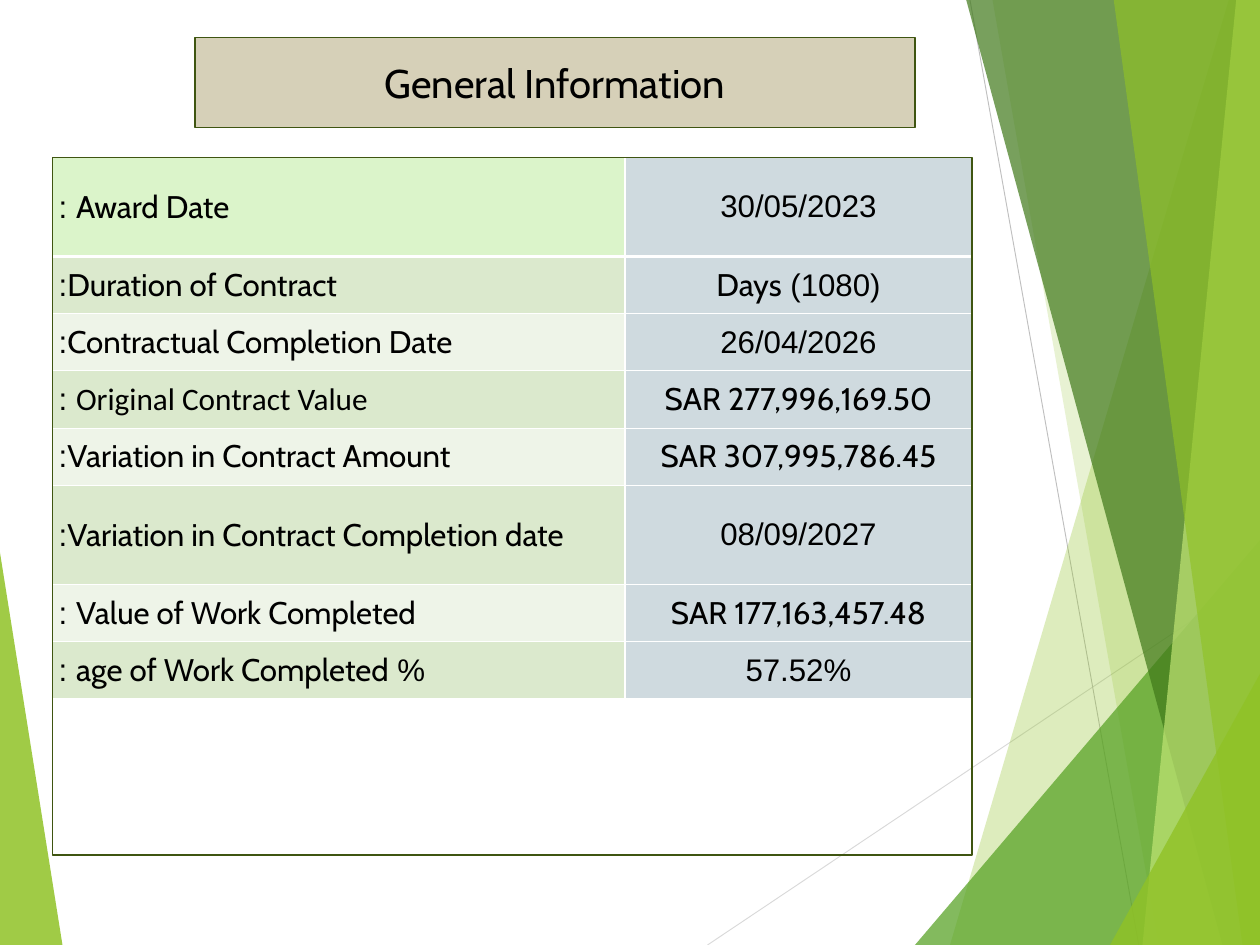
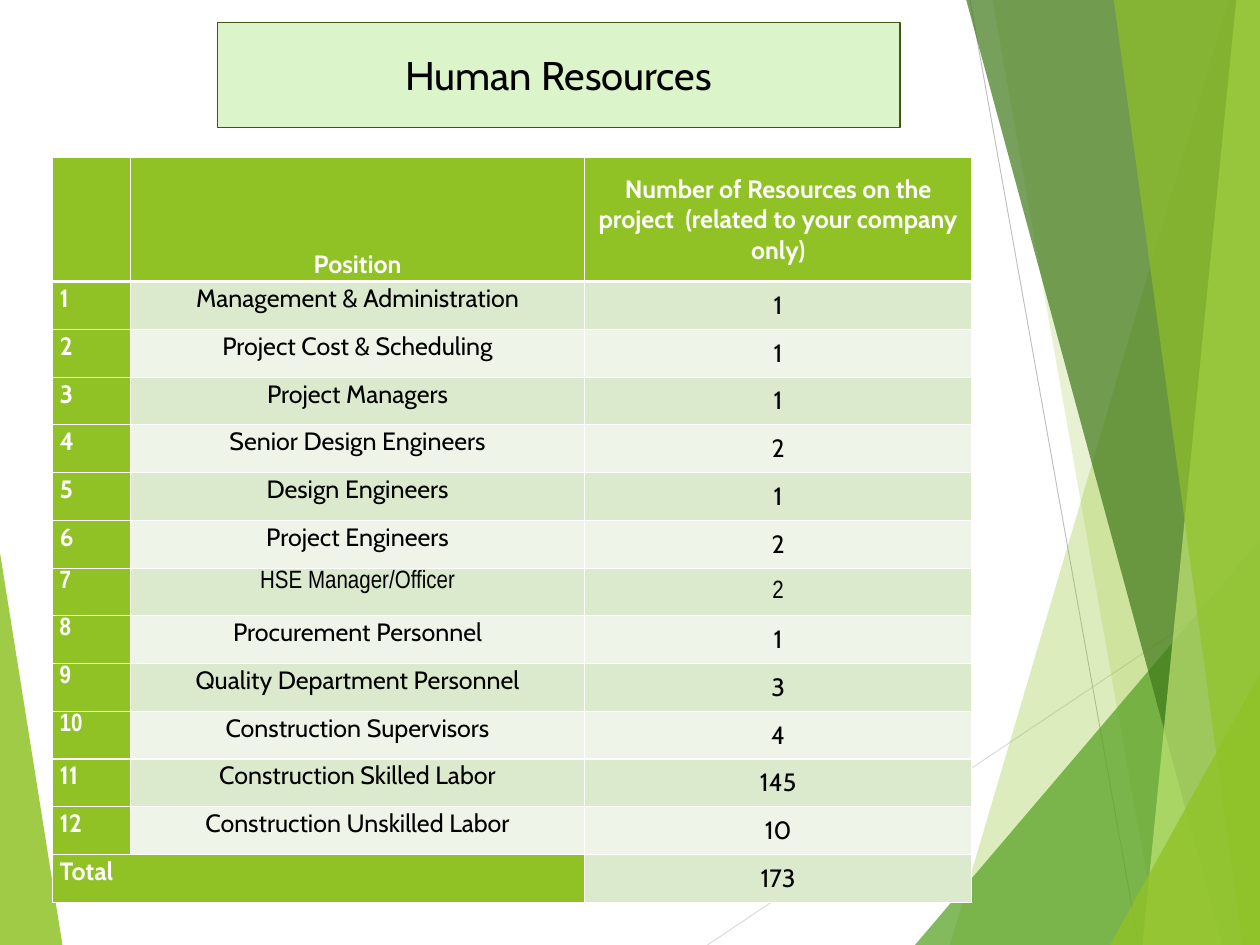
from dataclasses import dataclass

from lxml import etree
from pptx import Presentation
from pptx.dml.color import RGBColor
from pptx.enum.shapes import MSO_CONNECTOR, MSO_SHAPE
from pptx.enum.text import MSO_ANCHOR, PP_ALIGN
from pptx.oxml.ns import qn
from pptx.util import Pt

STRAIGHT = MSO_CONNECTOR.STRAIGHT
RECTANGLE = MSO_SHAPE.RECTANGLE
TOP, MIDDLE, BOTTOM = MSO_ANCHOR.TOP, MSO_ANCHOR.MIDDLE, MSO_ANCHOR.BOTTOM
LEFT, CENTER = PP_ALIGN.LEFT, PP_ALIGN.CENTER
PAGE_WIDTH, PAGE_HEIGHT = 1008, 756
TABLE_LEFT, TABLE_TOP, TABLE_WIDTH = 42, 126, 735.5
FRAME_HEIGHT = 558


@dataclass(frozen=True)
class Theme:
    lime: str = "90C226"
    green: str = "54A021"
    forest: str = "3F7819"
    pale_lime: str = "C0E474"
    outline: str = "3F5511"
    sand: str = "D6D0B8"
    mint: str = "DBF4CA"
    mist: str = "CFDADF"
    odd_row: str = "DBE9CD"
    even_row: str = "EEF4E8"
    white: str = "FFFFFF"
    black: str = "000000"
    light_gray: str = "D9D9D9"
    gray: str = "BFBFBF"
    font: str = "Cabin"
    plain_font: str = "Calibri"
    narrow_font: str = "Arial Narrow"
    complex_font: str = "Arial"
    title_size: float = 32
    info_size: float = 25
    staff_size: float = 20


THEME = Theme()


@dataclass(frozen=True)
class Facet:
    color: str
    opacity: int
    points: tuple[tuple[float, float], ...]


@dataclass(frozen=True)
class Ray:
    color: str
    start: tuple[float, float]
    end: tuple[float, float]


@dataclass(frozen=True)
class TitleBox:
    text: str
    left: float
    top: float
    width: float
    height: float
    fill: str
    geometry: str


@dataclass(frozen=True)
class CellStyle:
    fill: str
    size: float
    color: str = THEME.black
    font: str = THEME.font
    bold: bool = False
    align: PP_ALIGN = CENTER
    anchor: MSO_ANCHOR = MIDDLE
    margins: tuple[float, float] = (5.75, 1.45)
    right_to_left: bool = False


def band(color: str, opacity: int, top_x: float, bottom_x: float) -> Facet:
    """Full-height facet that reaches the right edge of the page."""
    return Facet(color, opacity, ((top_x, 0), (bottom_x, PAGE_HEIGHT),
                                  (PAGE_WIDTH, PAGE_HEIGHT), (PAGE_WIDTH, 0)))


def corner(color: str, opacity: int, bottom_x: float, right_y: float) -> Facet:
    """Triangle in the bottom right corner of the page."""
    return Facet(color, opacity, ((bottom_x, PAGE_HEIGHT), (PAGE_WIDTH, right_y),
                                  (PAGE_WIDTH, PAGE_HEIGHT)))


BACKDROP = (
    Facet(THEME.lime, 85, ((0, 442), (49.7, PAGE_HEIGHT), (0, PAGE_HEIGHT))),
    Ray(THEME.light_gray, (566, PAGE_HEIGHT), (PAGE_WIDTH, 460)),
    Ray(THEME.gray, (776, 0), (911, PAGE_HEIGHT)),
    band(THEME.lime, 30, 982.8, 759.6),
    band(THEME.lime, 20, 794.2, 926.6),
    corner(THEME.green, 72, 731.5, 432),
    band(THEME.forest, 70, 772.6, 977.8),
    band(THEME.pale_lime, 70, 989.3, 914.4),
    band(THEME.lime, 65, 890.6, 993.6),
    corner(THEME.lime, 80, 888.5, 539.3),
)

INFO_TITLE = TitleBox("General Information", 156, 30, 576, 72, THEME.sand, "rect")
INFO_COLUMNS = (458, 277.5)
INFO_TALL, INFO_SHORT = 79.2, 45.8
INFO_ROWS = (
    ("Award Date :", "30/05/2023", INFO_TALL),
    ("Duration of Contract:", "(1080) Days", INFO_SHORT),
    ("Contractual Completion Date:", "26/04/2026", INFO_SHORT),
    ("Original Contract Value :", "SAR 277,996,169.50", INFO_SHORT),
    ("Variation in Contract Amount:", "SAR 307,995,786.45", INFO_SHORT),
    ("Variation in Contract Completion date:", "08/09/2027", INFO_TALL),
    ("Value of Work Completed :", "SAR 177,163,457.48", INFO_SHORT),
    ("% age of Work Completed :", "57.52%", INFO_SHORT),
)
PLAIN_INFO_ROW = 3

STAFF_TITLE = TitleBox("Human Resources", 174, 18, 546, 84, THEME.mint, "roundRect")
STAFF_COLUMNS = (62.6, 363, 309.9)
STAFF_HEADER_HEIGHT, STAFF_ROW_HEIGHT = 99.4, 38.2
STAFF_HEADERS = ("Position",
                 "Number of Resources on the project  (related to your company only)")
STAFF = (
    ("Management & Administration", 1),
    ("Project Cost & Scheduling", 1),
    ("Project Managers", 1),
    ("Senior Design Engineers", 2),
    ("Design Engineers", 1),
    ("Project Engineers", 2),
    ("HSE Manager/Officer", 2),
    ("Procurement Personnel", 1),
    ("Quality Department Personnel", 3),
    ("Construction Supervisors", 4),
    ("Construction Skilled Labor", 145),
    ("Construction Unskilled Labor", 10),
)
NARROW_STAFF_ROW = 7
NARROW_NUMBERS = range(7, 11)


def rgb(color: str) -> RGBColor:
    return RGBColor.from_string(color)


def paint(shape, color: str) -> None:
    shape.fill.solid()
    shape.fill.fore_color.rgb = rgb(color)


def draw_facet(shapes, facet: Facet) -> None:
    builder = shapes.build_freeform(*facet.points[0], scale=Pt(1))
    builder.add_line_segments(facet.points[1:], close=True)
    shape = builder.convert_to_shape()
    paint(shape, facet.color)
    shape.line.fill.background()
    shape.shadow.inherit = False
    color = shape.element.spPr.find(f"{qn('a:solidFill')}/{qn('a:srgbClr')}")
    etree.SubElement(color, qn("a:alpha"), val=str(facet.opacity * 1000))


def draw_ray(shapes, ray: Ray) -> None:
    line = shapes.add_connector(STRAIGHT, *(Pt(n) for n in ray.start + ray.end))
    line.line.color.rgb = rgb(ray.color)
    line.line.width = Pt(0.75)
    etree.SubElement(line.element.spPr, qn("a:effectLst"))


def add_backdrop(page, layout) -> None:
    """Draw the facets on a page, then move them to the layout behind its title."""
    for holder in list(layout.placeholders)[1:]:
        layout.shapes.element.remove(holder.element)
    group = page.shapes.add_group_shape()
    for part in BACKDROP:
        if isinstance(part, Facet):
            draw_facet(group.shapes, part)
        else:
            draw_ray(group.shapes, part)
    layout.shapes.element.insert(2, group.element)


def outline(shape) -> None:
    shape.line.color.rgb = rgb(THEME.outline)
    shape.line.width = Pt(1.5)


def set_title(page, spec_box: TitleBox) -> None:
    title = page.shapes.title
    title.left, title.top = Pt(spec_box.left), Pt(spec_box.top)
    title.width, title.height = Pt(spec_box.width), Pt(spec_box.height)
    geometry = etree.Element(qn("a:prstGeom"), prst=spec_box.geometry)
    etree.SubElement(geometry, qn("a:avLst"))
    title.element.spPr.insert(1, geometry)
    paint(title, spec_box.fill)
    outline(title)
    title.text_frame.text = spec_box.text
    title.text_frame.word_wrap = True
    title.text_frame.vertical_anchor = MIDDLE
    para = title.text_frame.paragraphs[0]
    para.alignment = CENTER
    para.font.name, para.font.size = THEME.font, Pt(THEME.title_size)
    para.font.color.rgb = rgb(THEME.black)


def add_grid(page, columns: tuple[float, ...], heights: list[float]):
    """Add an empty table with the given column widths and row heights."""
    table = page.shapes.add_table(
        len(heights), len(columns), Pt(TABLE_LEFT), Pt(TABLE_TOP),
        Pt(TABLE_WIDTH), Pt(sum(heights))).table
    table.horz_banding = False
    for column, width in zip(table.columns, columns):
        column.width = Pt(width)
    for row, height in zip(table.rows, heights):
        row.height = Pt(height)
    return table


def set_borders(cell, row: int) -> None:
    """White borders, thick between the first row and the second."""
    properties = cell._tc.get_or_add_tcPr()
    widths = {"L": 1, "R": 1, "T": 3 if row == 1 else 1, "B": 3 if row == 0 else 1}
    for index, (side, width) in enumerate(widths.items()):
        border = etree.Element(qn(f"a:ln{side}"), w=str(Pt(width)))
        fill = etree.SubElement(border, qn("a:solidFill"))
        etree.SubElement(fill, qn("a:srgbClr"), val=THEME.white)
        properties.insert(index, border)


def fill_cell(table, row: int, column: int, text: str, style: CellStyle) -> None:
    cell = table.cell(row, column)
    paint(cell, style.fill)
    set_borders(cell, row)
    cell.vertical_anchor = style.anchor
    cell.margin_left = cell.margin_right = Pt(style.margins[0])
    cell.margin_top = cell.margin_bottom = Pt(style.margins[1])
    cell.text = text
    para = cell.text_frame.paragraphs[0]
    para.alignment = style.align
    para.font.name, para.font.size = style.font, Pt(style.size)
    para.font.bold = style.bold
    para.font.color.rgb = rgb(style.color)
    if style.right_to_left:
        properties = para._p.get_or_add_pPr()
        properties.set("rtl", "1")
        etree.SubElement(properties.find(qn("a:defRPr")), qn("a:cs"),
                         typeface=THEME.complex_font)


def row_fill(row: int) -> str:
    return THEME.odd_row if row % 2 else THEME.even_row


def info_style(fill: str, **changes) -> CellStyle:
    return CellStyle(fill, THEME.info_size, margins=(5, 0.35), right_to_left=True, **changes)


def build_general_information(page) -> None:
    table = add_grid(page, INFO_COLUMNS, [height for _, _, height in INFO_ROWS])
    for row, (label, value, _) in enumerate(INFO_ROWS):
        fill = row_fill(row) if row else THEME.mint
        font = THEME.plain_font if row == PLAIN_INFO_ROW else THEME.font
        fill_cell(table, row, 0, label, info_style(fill, align=LEFT, font=font))
        fill_cell(table, row, 1, value, info_style(THEME.mist))
    set_title(page, INFO_TITLE)
    frame = page.shapes.add_shape(RECTANGLE, Pt(TABLE_LEFT), Pt(TABLE_TOP),
                                  Pt(TABLE_WIDTH), Pt(FRAME_HEIGHT))
    frame.fill.background()
    outline(frame)
    frame.shadow.inherit = False


def staff_style(fill: str, **changes) -> CellStyle:
    return CellStyle(fill, THEME.staff_size, **changes)


def lime_style(**changes) -> CellStyle:
    return staff_style(THEME.lime, color=THEME.white, bold=True, **changes)


def build_human_resources(page) -> None:
    set_title(page, STAFF_TITLE)
    total_row = len(STAFF) + 1
    table = add_grid(page, STAFF_COLUMNS,
                     [STAFF_HEADER_HEIGHT] + [STAFF_ROW_HEIGHT] * total_row)
    for column, text in enumerate(("",) + STAFF_HEADERS):
        anchor = BOTTOM if column == 1 else MIDDLE
        fill_cell(table, 0, column, text, lime_style(anchor=anchor))
    for row, (position, count) in enumerate(STAFF, start=1):
        fill = row_fill(row)
        number_font = THEME.narrow_font if row in NARROW_NUMBERS else THEME.font
        font = THEME.narrow_font if row == NARROW_STAFF_ROW else THEME.font
        fill_cell(table, row, 0, str(row),
                  lime_style(font=number_font, align=LEFT, anchor=TOP))
        fill_cell(table, row, 1, position, staff_style(fill, font=font, anchor=TOP))
        fill_cell(table, row, 2, str(count), staff_style(fill, font=font))
    table.cell(total_row, 0).merge(table.cell(total_row, 1))
    fill_cell(table, total_row, 0, "Total", lime_style(align=LEFT, anchor=TOP))
    total = sum(count for _, count in STAFF)
    fill_cell(table, total_row, 2, str(total), staff_style(row_fill(total_row)))


def main() -> None:
    deck = Presentation()
    deck.slide_width, deck.slide_height = Pt(PAGE_WIDTH), Pt(PAGE_HEIGHT)
    layout = deck.slide_layouts.get_by_name("Title Only")
    info_page, staff_page = (deck.slides.add_slide(layout) for _ in range(2))
    add_backdrop(info_page, layout)
    build_general_information(info_page)
    build_human_resources(staff_page)
    deck.save("out.pptx")


if __name__ == "__main__":
    main()
